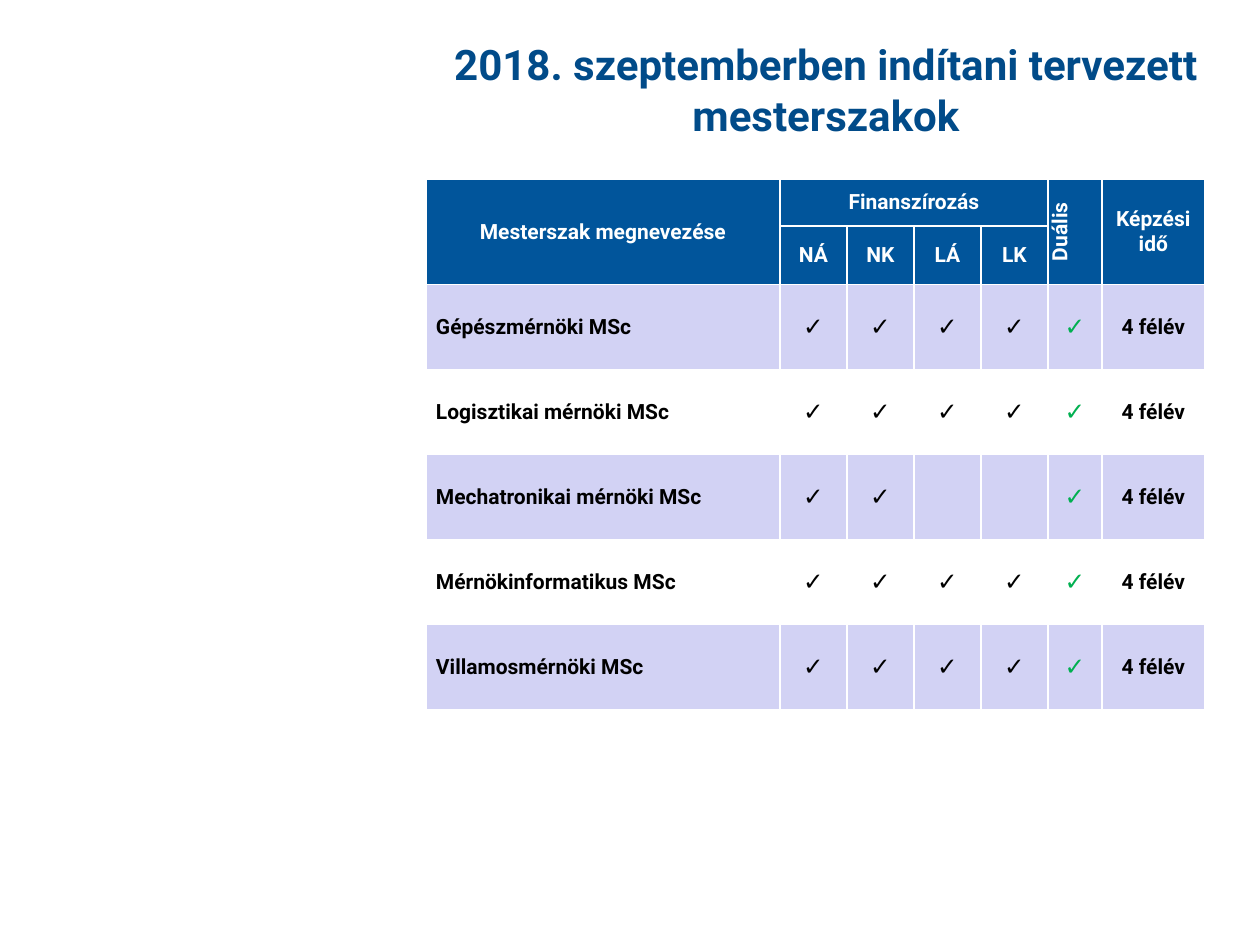
from pptx import Presentation
from pptx.dml.color import RGBColor
from pptx.enum.text import MSO_ANCHOR, PP_ALIGN
from pptx.util import Pt

MID = MSO_ANCHOR.MIDDLE
LEFT, CENTER = PP_ALIGN.LEFT, PP_ALIGN.CENTER
PX = 914400 / 126

THEME = {
    "font": "Roboto",
    "title": "014B89", "head": "01559B", "band": "D2D2F4",
    "white": "FFFFFF", "black": "000000", "green": "00B050",
    "big": 24, "mark": 14, "body": 12,
}


def px(num):
    return round(num * PX)


def write(frame, text, color, size, align=CENTER):
    para = frame.paragraphs[0]
    para.text = text
    para.alignment = align
    look = {"name": THEME["font"], "size": Pt(THEME[size]), "bold": True}
    for key, val in look.items():
        setattr(para.font, key, val)
    para.font.color.rgb = RGBColor.from_string(THEME[color])


deck = Presentation()
deck.slide_width, deck.slide_height = px(1260), px(945)
slide = deck.slides.add_slide(deck.slide_layouts[6])

# Title
box = slide.shapes.add_textbox(px(436), px(36), px(780), px(106))
frame = box.text_frame
frame.word_wrap = True
frame.vertical_anchor = MID
write(frame, "2018. szeptemberben indítani tervezett mesterszakok", "title", "big")

# Table grid
cols = [354] + [67] * 4 + [54, 103]
rows = [47, 58] + [85] * 5
table = slide.shapes.add_table(
    len(rows), len(cols), px(426), px(179), px(sum(cols)), px(sum(rows))).table
table.horz_banding = False
for col, wide in zip(table.columns, cols):
    col.width = px(wide)
for row, high in zip(table.rows, rows):
    row.height = px(high)

# Cell fills and margins
for r in range(len(rows)):
    fill = "head" if r < 2 else "white" if r % 2 else "band"
    for c in range(len(cols)):
        cell = table.cell(r, c)
        cell.fill.solid()
        cell.fill.fore_color.rgb = RGBColor.from_string(THEME[fill])
        form = {"vertical_anchor": MID, "margin_top": 0, "margin_bottom": 0,
                "margin_left": px(10) if r > 1 and c == 0 else 0,
                "margin_right": 0}
        for key, val in form.items():
            setattr(cell, key, val)

# Header
for c in (0, 5, 6):
    table.cell(0, c).merge(table.cell(1, c))
table.cell(0, 1).merge(table.cell(0, 4))
heads = [
    (0, 0, "Mesterszak megnevezése"), (0, 1, "Finanszírozás"),
    (0, 5, "Duális"), (0, 6, "Képzési idő"),
    (1, 1, "NÁ"), (1, 2, "NK"), (1, 3, "LÁ"), (1, 4, "LK"),
]
for r, c, text in heads:
    write(table.cell(r, c).text_frame, text, "white", "body")
table.cell(0, 5)._tc.get_or_add_tcPr().set("vert", "vert270")

# Courses, with the number of funding forms each one offers
courses = [
    ("Gépészmérnöki MSc", 4),
    ("Logisztikai mérnöki MSc", 4),
    ("Mechatronikai mérnöki MSc", 2),
    ("Mérnökinformatikus MSc", 4),
    ("Villamosmérnöki MSc", 4),
]
for r, (name, forms) in enumerate(courses, 2):
    write(table.cell(r, 0).text_frame, name, "black", "body", LEFT)
    for c in range(1, forms + 1):
        write(table.cell(r, c).text_frame, "✓", "black", "mark")
    write(table.cell(r, 5).text_frame, "✓", "green", "mark")
    write(table.cell(r, 6).text_frame, "4 félév", "black", "body")

deck.save("out.pptx")
